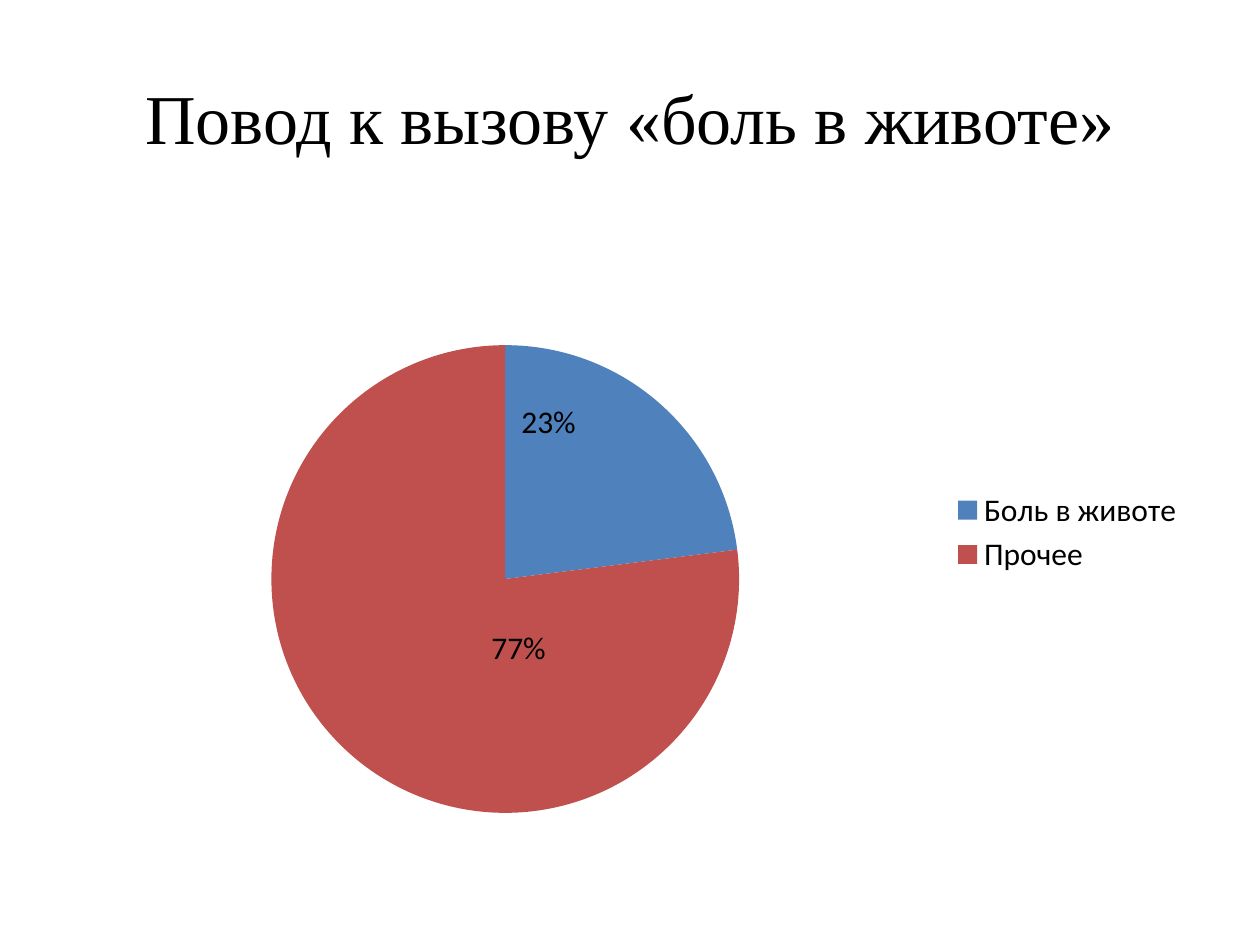
from lxml.etree import SubElement
from pptx import Presentation
from pptx.chart.data import CategoryChartData
from pptx.dml.color import RGBColor
from pptx.enum.chart import XL_CHART_TYPE as ChartType, XL_LABEL_POSITION as LabelSpot
from pptx.enum.chart import XL_LEGEND_POSITION as LegendSpot
from pptx.enum.text import MSO_ANCHOR as Anchor, PP_ALIGN as Align
from pptx.oxml.ns import qn
from pptx.util import Inches, Pt

WIDTH, HEIGHT = Inches(10), Inches(7.5)
COLORS = {"text": "000000", "pain": "4F81BD", "other": "C0504D"}
SHARES = {"Боль в животе": 0.23, "Прочее": 0.77}
LABEL_SHIFTS = [(-0.03, -0.11), (0.08, -0.03)]


def rgb(name):
    """Return the named colour."""
    return RGBColor.from_string(COLORS[name])


def frame(left, top, width, height):
    """Turn shares of the slide into lengths."""
    return int(left * WIDTH), int(top * HEIGHT), int(width * WIDTH), int(height * HEIGHT)


def style(font, *, name, size, color="text"):
    """Set the face, size and colour of a font."""
    font.name, font.size, font.color.rgb = name, Pt(size), rgb(color)


def add_text(page, text, *, at, align=Align.CENTER, anchor=Anchor.MIDDLE, **font):
    """Add a wrapped text box with one formatted paragraph."""
    box = page.shapes.add_textbox(*frame(*at)).text_frame
    box.word_wrap, box.vertical_anchor = True, anchor
    para = box.paragraphs[0]
    para.alignment = align
    span = para.add_run()
    span.text = text
    style(span.font, **font)


def set_layout(parent, index, **values):
    """Give a chart part a manual layout."""
    for old in parent.findall(qn("c:layout")):
        parent.remove(old)
    layout = SubElement(parent, qn("c:layout"))
    parent.insert(index, layout)
    manual = SubElement(layout, qn("c:manualLayout"))
    for key, value in values.items():
        SubElement(manual, qn(f"c:{key}")).set("val", str(value))


def add_pie(page, shares, *, at, colors, shifts):
    """Add a pie with percentage labels and a legend on the right."""
    data = CategoryChartData(number_format="0%")
    data.categories = list(shares)
    data.add_series("  ", list(shares.values()))
    chart = page.shapes.add_chart(ChartType.PIE, *frame(*at), data).chart
    style(chart.font, name="Calibri", size=18)
    chart.has_title = False
    chart.has_legend = True
    chart.legend.position = LegendSpot.RIGHT
    chart.legend.include_in_layout = False
    plot = chart.plots[0]
    plot.vary_by_categories = True
    plot.has_data_labels = True
    labels = plot.data_labels
    labels.show_value, labels.show_percentage = True, False
    labels.number_format, labels.number_format_is_linked = "0%", False
    series = plot.series[0]
    for index, (color, (x, y)) in enumerate(zip(colors, shifts)):
        point = series.points[index]
        point.format.fill.solid()
        point.format.fill.fore_color.rgb = rgb(color)
        point.data_label.position = LabelSpot.CENTER
    for label, (x, y) in zip(series.data_labels._element.findall(qn("c:dLbl")), shifts):
        set_layout(label, 1, x=x, y=y)
    series.data_labels.show_value = True
    series.data_labels.number_format = "0%"
    series.data_labels.number_format_is_linked = False
    area = chart._chartSpace.chart.plotArea
    set_layout(area, 0, layoutTarget="inner", xMode="edge", yMode="edge",
               x=0.18, y=0.2, w=0.42, h=0.75)


def main():
    """Build and save the deck."""
    deck = Presentation()
    deck.slide_width, deck.slide_height = WIDTH, HEIGHT
    page = deck.slides.add_slide(deck.slide_layouts[6])
    add_text(page, "Повод к вызову «боль в животе»", at=(0.05, 0.04, 0.9, 1 / 6),
             name="Times New Roman", size=40)
    add_pie(page, SHARES, at=(0.05, 7 / 30, 0.9, 0.66),
            colors=("pain", "other"), shifts=LABEL_SHIFTS)
    deck.save("out.pptx")


if __name__ == "__main__":
    main()
